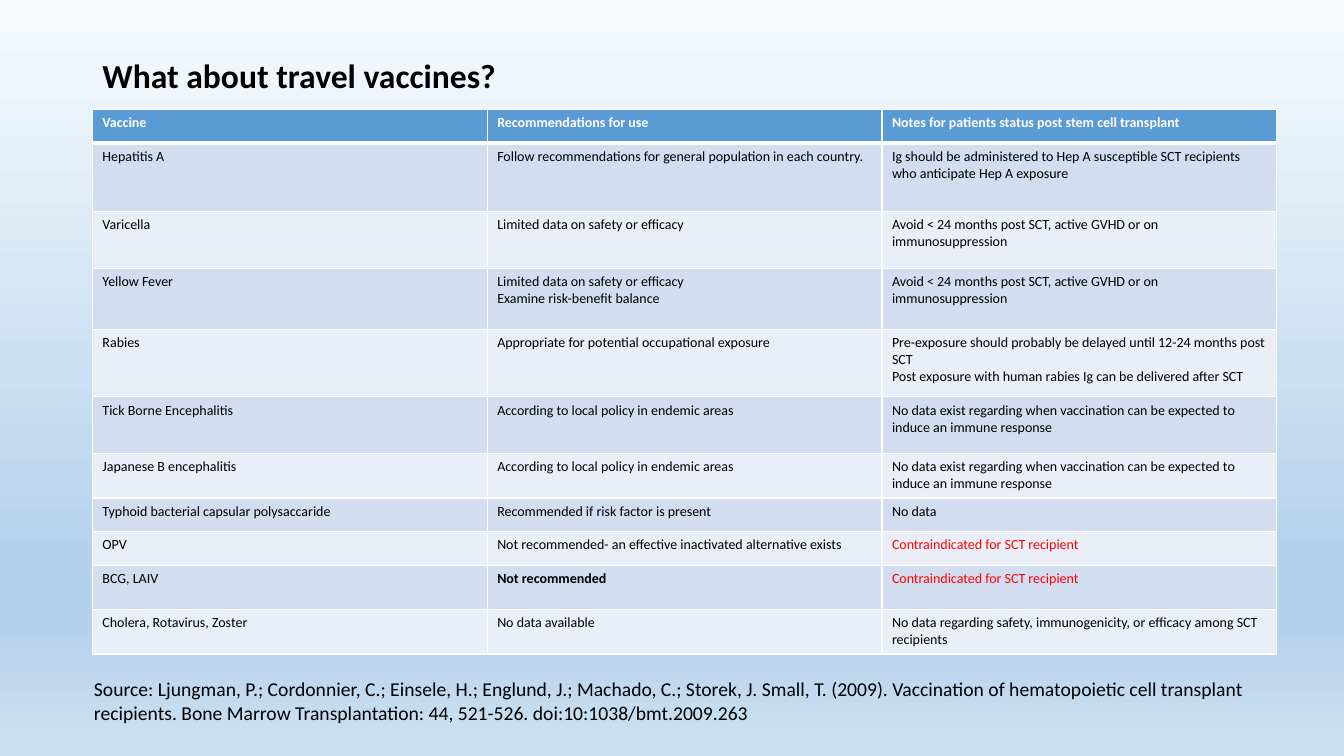
from copy import deepcopy
from dataclasses import dataclass

from lxml.etree import SubElement as add_element
from pptx import Presentation
from pptx.dml.color import RGBColor as Color
from pptx.enum.text import MSO_ANCHOR as Anchor
from pptx.oxml.ns import qn
from pptx.util import Inches, Pt


@dataclass(frozen=True)
class Theme:
    font: str = "Calibri"
    title_size: int = 24
    table_size: int = 10
    source_size: int = 14
    text: str = "000000"
    light: str = "FFFFFF"
    warning: str = "FF0000"
    header: str = "5B9BD5"
    bands: tuple = ("D2DEEF", "EAEFF7")
    background: tuple = ((0, "F7FAFD"), (74, "B5D2EC"), (83, "B5D2EC"), (100, "CEE1F2"))
    border: int = 1
    header_border: int = 3


THEME = Theme()
SLIDE_WIDTH, SLIDE_HEIGHT = Inches(13.33), Inches(7.5)
GRID_COLUMNS, GRID_ROWS = 160, 90
TABLE_ROWS = (4, 8.2, 6.75, 7.3, 8, 6.75, 5.3, 4, 4, 5.3, 5.3)

TITLE = "What about travel vaccines?"
SOURCE = (
    "Source: Ljungman, P.; Cordonnier, C.; Einsele, H.; Englund, J.; Machado, C.; "
    "Storek, J. Small, T. (2009). Vaccination of hematopoietic cell transplant recipients. "
    "Bone Marrow Transplantation: 44, 521-526. doi:10:1038/bmt.2009.263"
)
LIMITED = "Limited data on safety or efficacy"
AVOID = "Avoid < 24 months post SCT, active GVHD or on immunosuppression"
LOCAL_POLICY = "According to local policy in endemic areas"
NO_RESPONSE_DATA = (
    "No data exist regarding when vaccination can be expected to induce an immune response"
)
NOT_RECOMMENDED = "Not recommended"
CONTRAINDICATED = "Contraindicated for SCT recipient"
VACCINES = (
    ("Vaccine", "Recommendations for use", "Notes for patients status post stem cell transplant"),
    ("Hepatitis A", "Follow recommendations for general population in each country.",
     "Ig should be administered to Hep A susceptible SCT recipients who anticipate Hep A exposure"),
    ("Varicella", LIMITED, AVOID),
    ("Yellow Fever", f"{LIMITED}\nExamine risk-benefit balance", AVOID),
    ("Rabies", "Appropriate for potential occupational exposure",
     "Pre-exposure should probably be delayed until 12-24 months post SCT\n"
     "Post exposure with human rabies Ig can be delivered after SCT"),
    ("Tick Borne Encephalitis", LOCAL_POLICY, NO_RESPONSE_DATA),
    ("Japanese B encephalitis", LOCAL_POLICY, NO_RESPONSE_DATA),
    ("Typhoid bacterial capsular polysaccaride", "Recommended if risk factor is present", "No data"),
    ("OPV", "Not recommended- an effective inactivated alternative exists", CONTRAINDICATED),
    ("BCG, LAIV", NOT_RECOMMENDED, CONTRAINDICATED),
    ("Cholera, Rotavirus, Zoster", "No data available",
     "No data regarding safety, immunogenicity, or efficacy among SCT recipients"),
)


def across(columns):
    return round(SLIDE_WIDTH * columns / GRID_COLUMNS)


def down(rows):
    return round(SLIDE_HEIGHT * rows / GRID_ROWS)


def place(left, top, width, height):
    return across(left), down(top), across(width), down(height)


def write_text(frame, text, size, color=THEME.text, bold=False):
    frame.text = text
    for paragraph in frame.paragraphs:
        formats = {"name": THEME.font, "size": Pt(size), "bold": bold}
        for run in paragraph.runs:
            for name, value in formats.items():
                setattr(run.font, name, value)
            run.font.color.rgb = Color.from_string(color)


def paint_background(slide):
    fill = slide.background.fill
    fill.gradient()
    fill.gradient_angle = 270
    stop_list = next(slide.element.iter(qn("a:gsLst")))
    template = deepcopy(stop_list[0])
    for stop in list(stop_list):
        stop_list.remove(stop)
    for _ in THEME.background:
        stop_list.append(deepcopy(template))
    for stop, (position, color) in zip(fill.gradient_stops, THEME.background):
        stop.position = position / 100
        stop.color.rgb = Color.from_string(color)


def add_text(slide, text, area, size, bold=False, anchor=Anchor.TOP):
    frame = slide.shapes.add_textbox(*place(*area)).text_frame
    frame.word_wrap = True
    frame.vertical_anchor = anchor
    write_text(frame, text, size, bold=bold)


def add_borders(cell, is_header):
    properties = cell._tc.get_or_add_tcPr()
    bottom = THEME.header_border if is_header else THEME.border
    widths = {"L": THEME.border, "R": THEME.border, "T": THEME.border, "B": bottom}
    for index, (side, width) in enumerate(widths.items()):
        line = add_element(properties, qn(f"a:ln{side}"), w=str(Pt(width)))
        fill = add_element(line, qn("a:solidFill"))
        add_element(fill, qn("a:srgbClr"), val=THEME.light)
        properties.insert(index, line)


def style_cell(cell, text, row):
    is_header = row == 0
    cell.fill.solid()
    fill_color = THEME.header if is_header else THEME.bands[(row - 1) % 2]
    cell.fill.fore_color.rgb = Color.from_string(fill_color)
    color = THEME.light if is_header else THEME.text
    if text == CONTRAINDICATED:
        color = THEME.warning
    bold = is_header or text == NOT_RECOMMENDED
    write_text(cell.text_frame, text, THEME.table_size, color, bold)
    add_borders(cell, is_header)


def add_vaccine_table(slide, left, top, width):
    area = place(left, top, width, sum(TABLE_ROWS))
    table = slide.shapes.add_table(len(VACCINES), len(VACCINES[0]), *area).table
    for row, height in zip(table.rows, TABLE_ROWS):
        row.height = down(height)
    for row, texts in enumerate(VACCINES):
        for column, text in enumerate(texts):
            style_cell(table.cell(row, column), text, row)


def main():
    presentation = Presentation()
    presentation.slide_width, presentation.slide_height = SLIDE_WIDTH, SLIDE_HEIGHT
    slide = presentation.slides.add_slide(presentation.slide_layouts[6])
    paint_background(slide)
    add_text(slide, TITLE, (11, 4.8, 138, 8.2), THEME.title_size, True, Anchor.MIDDLE)
    add_vaccine_table(slide, 11, 13, 141)
    add_text(slide, SOURCE, (10, 80, 142, 6.8), THEME.source_size)
    presentation.save("out.pptx")


if __name__ == "__main__":
    main()
